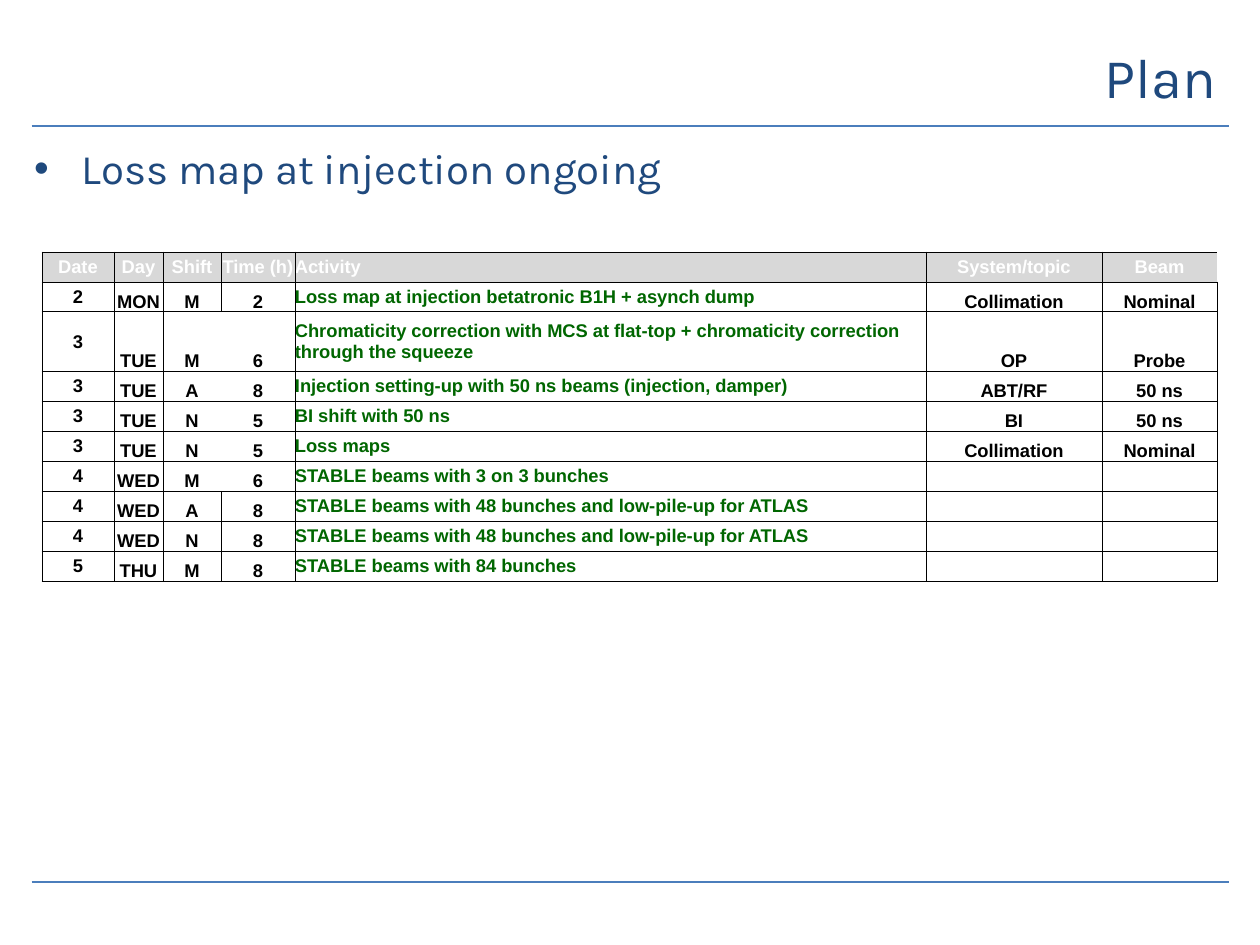
from lxml import etree
from pptx import Presentation
from pptx.dml.color import RGBColor
from pptx.enum.shapes import MSO_CONNECTOR
from pptx.enum.text import MSO_ANCHOR as Anchor, PP_ALIGN as Align
from pptx.oxml import parse_xml
from pptx.oxml.ns import qn
from pptx.util import Pt

# Content
TITLE = "Plan"
BULLET = "Loss map at injection ongoing"
HEADER = ("Date", "Day", "Shift", "Time (h)", "Activity", "System/topic", "Beam")
SHIFTS = [
    ("2", "MON", "M", "2", "Loss map at injection betatronic B1H + asynch dump", "Collimation", "Nominal"),
    ("3", "TUE", "M", "6", "Chromaticity correction with MCS at flat-top + chromaticity correction "
     "through the squeeze", "OP", "Probe"),
    ("3", "TUE", "A", "8", "Injection setting-up with 50 ns beams (injection, damper)", "ABT/RF", "50 ns"),
    ("3", "TUE", "N", "5", "BI shift with 50 ns", "BI", "50 ns"),
    ("3", "TUE", "N", "5", "Loss maps", "Collimation", "Nominal"),
    ("4", "WED", "M", "6", "STABLE beams with 3 on 3 bunches", "", ""),
    ("4", "WED", "A", "8", "STABLE beams with 48 bunches and low-pile-up for ATLAS", "", ""),
    ("4", "WED", "N", "8", "STABLE beams with 48 bunches and low-pile-up for ATLAS", "", ""),
    ("5", "THU", "M", "8", "STABLE beams with 84 bunches", "", ""),
]
DATE, SHIFT, TIME, ACTIVITY, BEAM = 0, 2, 3, 4, 6
COLUMN_WIDTHS = (41.1, 28.1, 33.1, 42.3, 360.6, 100.6, 65.8)
ROW_HEIGHT = 17.1
TALL_ROW = 2
OPEN_ROWS = range(2, 7)  # no line between shift and time
NAVY, RULE, BLACK, WHITE, GREEN, GREY = "1F497D", "4B7EBC", "000000", "FFFFFF", "006600", "D8D8D8"


def color(hex_code):
    return RGBColor.from_string(hex_code)


def style(paragraph, size, name, hex_code, bold=False):
    font = paragraph.font
    font.size, font.name, font.bold = Pt(size), name, bold
    font.color.rgb = color(hex_code)


def add_rule(slide, y):
    rule = slide.shapes.add_connector(MSO_CONNECTOR.STRAIGHT, Pt(18), Pt(y), Pt(702), Pt(y))
    rule.line.color.rgb = color(RULE)
    rule.line.width = Pt(1.5)
    etree.SubElement(rule._element.spPr, qn("a:effectLst"))


def add_text(slide, text, left, top, width, height, size, anchor):
    frame = slide.shapes.add_textbox(Pt(left), Pt(top), Pt(width), Pt(height)).text_frame
    frame.word_wrap = True
    frame.vertical_anchor = anchor
    paragraph = frame.paragraphs[0]
    paragraph.text = text
    return paragraph


def set_borders(cell, hidden):
    props = cell._tc.get_or_add_tcPr()
    for index, side in enumerate(("lnL", "lnR", "lnT", "lnB")):
        paint = ("<a:noFill/>" if side in hidden
                 else f'<a:solidFill><a:srgbClr val="{BLACK}"/></a:solidFill>')
        props.insert(index, parse_xml(
            f'<a:{side} xmlns:a="http://schemas.openxmlformats.org/drawingml/2006/main" '
            f'w="{Pt(0.5)}">{paint}</a:{side}>'))


def hidden_sides(row, col):
    if row == 0 and col == BEAM:
        return ("lnR",)
    if row in OPEN_ROWS:
        return {SHIFT: ("lnR",), TIME: ("lnL",)}.get(col, ())
    return ()


def fill_cell(cell, text, row, col):
    cell.margin_left = cell.margin_right = cell.margin_top = cell.margin_bottom = 0
    centred_row = row == 0 or col in (DATE, ACTIVITY)
    cell.vertical_anchor = Anchor.MIDDLE if centred_row else Anchor.BOTTOM
    if row == 0 or col in (ACTIVITY, BEAM):
        cell.fill.solid()
        cell.fill.fore_color.rgb = color(WHITE if row else GREY)
    else:
        cell.fill.background()
    set_borders(cell, hidden_sides(row, col))

    paragraph = cell.text_frame.paragraphs[0]
    paragraph.alignment = Align.LEFT if col == ACTIVITY else Align.CENTER
    text_color = WHITE if row == 0 else GREEN if col == ACTIVITY else BLACK
    if text:
        paragraph.text = text
    else:  # keep empty cells from stretching their row
        etree.SubElement(paragraph._p, qn("a:endParaRPr"), sz="1050")
    style(paragraph, 10.5, "Arial", text_color, bold=True)


def add_schedule(slide):
    rows = [HEADER, *SHIFTS]
    heights = [ROW_HEIGHT * (2 if row == TALL_ROW else 1) for row in range(len(rows))]
    table = slide.shapes.add_table(len(rows), len(HEADER), Pt(24), Pt(144),
                                   Pt(sum(COLUMN_WIDTHS)), Pt(sum(heights))).table
    table.first_row = table.horz_banding = False
    for column, width in zip(table.columns, COLUMN_WIDTHS):
        column.width = Pt(width)
    for row, (texts, height) in enumerate(zip(rows, heights)):
        table.rows[row].height = Pt(height)
        for col, text in enumerate(texts):
            fill_cell(table.cell(row, col), text, row, col)


def main():
    deck = Presentation()
    deck.slide_width, deck.slide_height = Pt(720), Pt(540)
    slide = deck.slides.add_slide(deck.slide_layouts[6])

    # Rules above and below the content
    for y in (72, 504):
        add_rule(slide, y)

    # Title
    title = add_text(slide, TITLE, 126, 12.5, 576, 62.5, 32, Anchor.MIDDLE)
    title.alignment = Align.RIGHT
    style(title, 32, "Karla", NAVY)

    # Bullet
    bullet = add_text(slide, BULLET, 12.5, 78, 684, 72, 24, Anchor.TOP)
    props = bullet._p.get_or_add_pPr()
    props.set("marL", str(Pt(27)))
    props.set("indent", str(Pt(-27)))
    etree.SubElement(props, qn("a:buFont"), typeface="Arial")
    etree.SubElement(props, qn("a:buChar"), char="•")
    style(bullet, 24, "Karla", NAVY)

    # Schedule table
    add_schedule(slide)
    deck.save("out.pptx")


if __name__ == "__main__":
    main()
